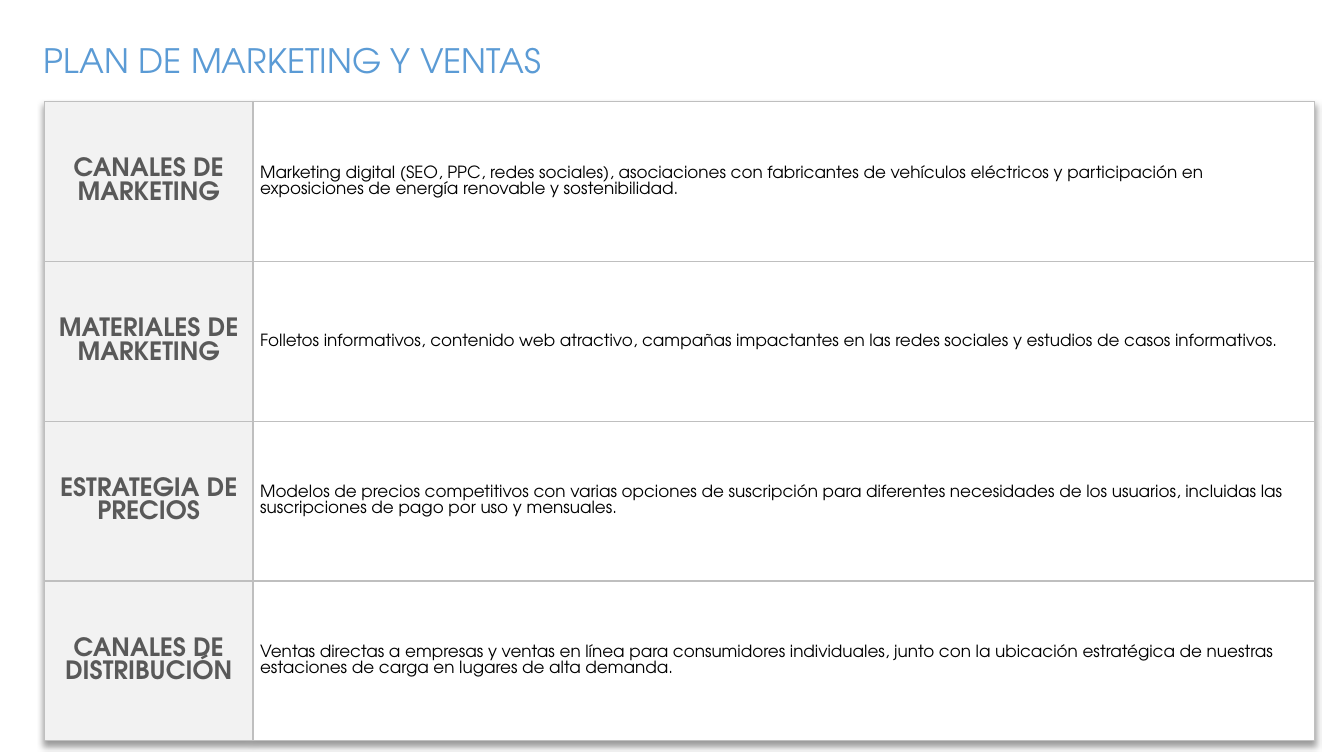
from lxml.etree import SubElement
from pptx import Presentation
from pptx.dml.color import RGBColor
from pptx.enum.text import MSO_ANCHOR, MSO_AUTO_SIZE, PP_ALIGN
from pptx.oxml import parse_xml
from pptx.oxml.ns import nsdecls, qn
from pptx.util import Inches, Pt

PLAN = [
    ("CANALES DE MARKETING",
     "Marketing digital (SEO, PPC, redes sociales), asociaciones con fabricantes de vehículos "
     "eléctricos y participación en exposiciones de energía renovable y sostenibilidad."),
    ("MATERIALES DE MARKETING",
     "Folletos informativos, contenido web atractivo, campañas impactantes en las redes "
     "sociales y estudios de casos informativos."),
    ("ESTRATEGIA DE PRECIOS",
     "Modelos de precios competitivos con varias opciones de suscripción para diferentes "
     "necesidades de los usuarios, incluidas las suscripciones de pago por uso y mensuales."),
    ("CANALES DE DISTRIBUCIÓN",
     "Ventas directas a empresas y ventas en línea para consumidores individuales, junto con la "
     "ubicación estratégica de nuestras estaciones de carga en lugares de alta demanda."),
]


def color(hex_value):
    return RGBColor.from_string(hex_value)


class PlanSlide:
    FONT = "TeX Gyre Adventor"
    BLUE, GRAY, BLACK, WHITE = "5B9BD5", "595959", "000000", "FFFFFF"
    LABEL_FILL, BORDER = "F2F2F2", "BFBFBF"

    def __init__(self, presentation):
        self.slide = presentation.slides.add_slide(presentation.slide_layouts[6])

    def add_run(self, paragraph, text, size, hex_value, bold=False):
        run = paragraph.add_run()
        run.text = text
        run.font.size = Pt(size)
        run.font.name = self.FONT
        run.font.bold = bold
        run.font.color.rgb = color(hex_value)
        return run

    def add_title(self, text, left, top, width, height):
        title = self.slide.shapes.add_textbox(
            Inches(left), Inches(top), Inches(width), Inches(height))
        frame = title.text_frame
        frame.word_wrap = True
        frame.auto_size = MSO_AUTO_SIZE.SHAPE_TO_FIT_TEXT
        self.add_run(frame.paragraphs[0], text, 24, self.BLUE)

    def add_plan(self, entries, left, top, widths, row_height):
        plan = self.slide.shapes.add_table(
            len(entries), len(widths), Inches(left), Inches(top),
            Inches(sum(widths)), Inches(row_height * len(entries))).table
        plan.first_row = plan.horz_banding = False
        for column, width in zip(plan.columns, widths):
            column.width = Inches(width)
        for index, (label, detail) in enumerate(entries):
            plan.rows[index].height = Inches(row_height)
            self.fill_label(plan.cell(index, 0), label)
            self.fill_detail(plan.cell(index, 1), detail)
        self.add_shadow(plan)

    def fill_label(self, cell, text):
        self.style_cell(cell, self.LABEL_FILL)
        paragraph = cell.text_frame.paragraphs[0]
        paragraph.alignment = PP_ALIGN.CENTER
        self.add_run(paragraph, text, 18, self.GRAY, bold=True)

    def fill_detail(self, cell, text):
        self.style_cell(cell, self.WHITE)
        cell.margin_left = cell.margin_right = Inches(0.07)
        cell.margin_top = cell.margin_bottom = 0
        run = self.add_run(cell.text_frame.paragraphs[0], text, 12, self.BLACK)
        # White highlight sits right after the text fill
        highlight = parse_xml(
            f'<a:highlight {nsdecls("a")}><a:srgbClr val="{self.WHITE}"/></a:highlight>')
        run.font._element.find(qn("a:solidFill")).addnext(highlight)

    def style_cell(self, cell, fill):
        cell.vertical_anchor = MSO_ANCHOR.MIDDLE
        properties = cell._tc.get_or_add_tcPr()
        for side in ("lnL", "lnR", "lnT", "lnB"):
            line = SubElement(properties, qn(f"a:{side}"), w=str(Pt(1)))
            line_fill = SubElement(line, qn("a:solidFill"))
            SubElement(line_fill, qn("a:srgbClr"), val=self.BORDER)
        cell.fill.solid()
        cell.fill.fore_color.rgb = color(fill)

    def add_shadow(self, table):
        table._tbl.tblPr.insert(0, parse_xml(
            f'<a:effectLst {nsdecls("a")}>'
            f'<a:outerShdw blurRad="{Pt(4)}" dist="{Pt(3)}" dir="5400000" algn="t" '
            f'rotWithShape="0"><a:srgbClr val="{self.BLACK}"><a:alpha val="40000"/>'
            '</a:srgbClr></a:outerShdw></a:effectLst>'))


def main():
    presentation = Presentation()
    presentation.slide_width = Inches(13.33)
    presentation.slide_height = Inches(7.5)
    page = PlanSlide(presentation)
    # Heading
    page.add_title("PLAN DE MARKETING Y VENTAS", 0.33, 0.35, 8.08, 0.5)
    # Marketing and sales plan
    page.add_plan(PLAN, 0.44, 1.01, (2.07, 10.53), 1.585)
    presentation.save("out.pptx")


if __name__ == "__main__":
    main()
